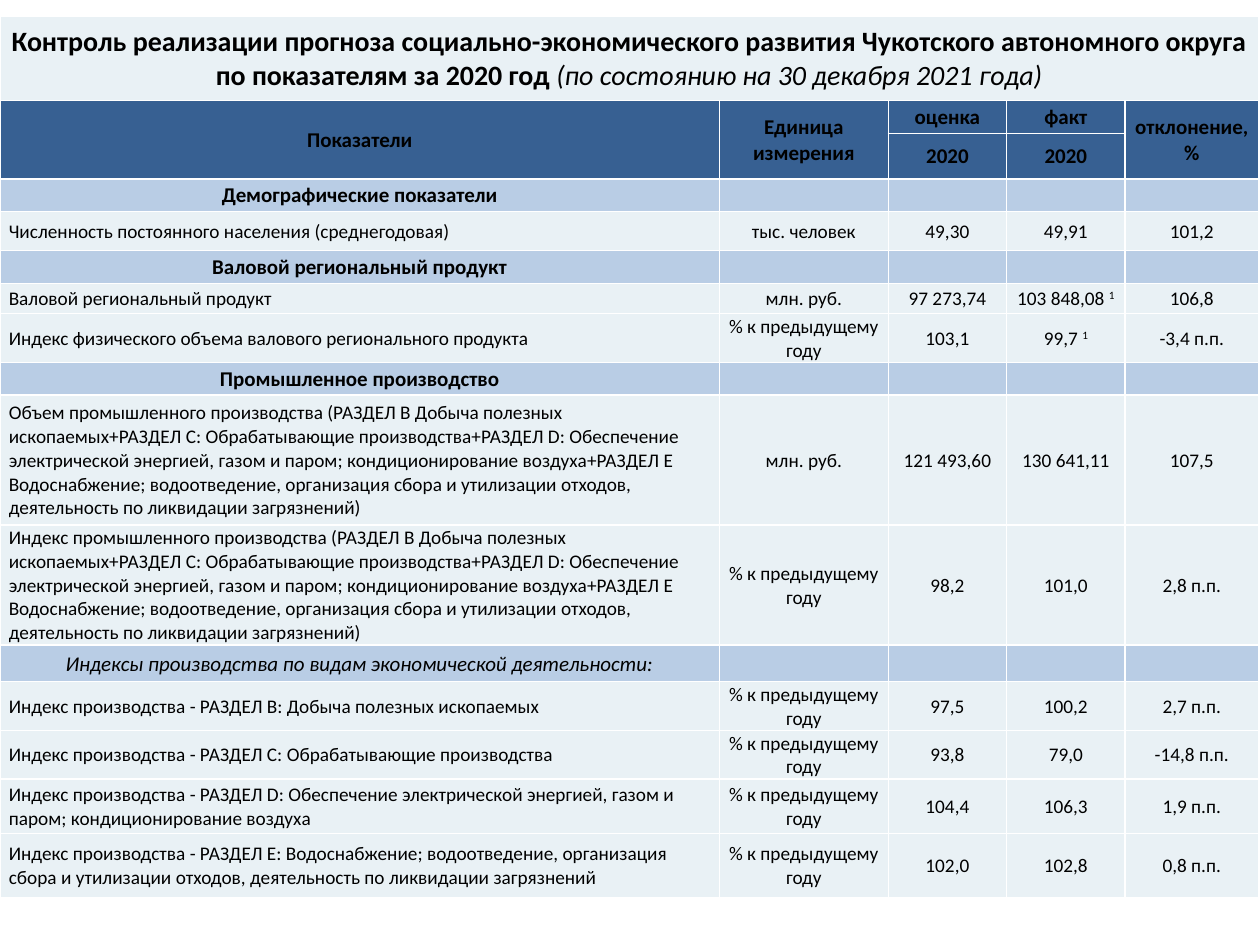
import pptx
import pptx.dml.color
import pptx.enum.text
import pptx.oxml.ns
import pptx.util
from lxml import etree

PALE, BLUE, NAVY, WHITE, BLACK = "E9F1F5", "B9CDE5", "376092", "FFFFFF", "000000"
FONT = "Calibri"
COLUMN_WIDTHS = [5.71, 1.34, 0.94, 0.94, 1.06]
TITLE_HEIGHT, HEADER_HEIGHTS = 0.67, [0.26, 0.36]
GROWTH_UNIT = "% к предыдущему году"
MONEY_UNIT = "млн. руб."
INDUSTRY = (
    "промышленного производства (РАЗДЕЛ B Добыча полезных ископаемых+РАЗДЕЛ C: "
    "Обрабатывающие производства+РАЗДЕЛ D: Обеспечение электрической энергией, газом и паром; "
    "кондиционирование воздуха+РАЗДЕЛ E Водоснабжение; водоотведение, организация сбора и "
    "утилизации отходов, деятельность по ликвидации загрязнений)"
)
HEADERS = [
    ["Показатели", "Единица измерения", "оценка", "факт", "отклонение, %"],
    ["", "", "2020", "2020", ""],
]
ACTIVITIES = "Индексы производства по видам экономической деятельности:"
BODY = [
    (0.26, "Демографические показатели"),
    (0.31, "Численность постоянного населения (среднегодовая)", "тыс. человек", "49,30", "49,91", "101,2"),
    (0.26, "Валовой региональный продукт"),
    (0.24, "Валовой региональный продукт", MONEY_UNIT, "97 273,74", "103 848,08 ^1", "106,8"),
    (0.37, "Индекс физического объема валового регионального продукта", GROWTH_UNIT,
     "103,1", "99,7 ^1", "-3,4 п.п."),
    (0.26, "Промышленное производство"),
    (1.03, "Объем " + INDUSTRY, MONEY_UNIT, "121 493,60", "130 641,11", "107,5"),
    (0.94, "Индекс " + INDUSTRY, GROWTH_UNIT, "98,2", "101,0", "2,8 п.п."),
    (0.29, ACTIVITIES),
    (0.37, "Индекс производства - РАЗДЕЛ B: Добыча полезных ископаемых", GROWTH_UNIT,
     "97,5", "100,2", "2,7 п.п."),
    (0.37, "Индекс производства - РАЗДЕЛ C: Обрабатывающие производства", GROWTH_UNIT,
     "93,8", "79,0", "-14,8 п.п."),
    (0.43, "Индекс производства - РАЗДЕЛ D: Обеспечение электрической энергией, газом и паром; "
     "кондиционирование воздуха", GROWTH_UNIT, "104,4", "106,3", "1,9 п.п."),
    (0.51, "Индекс производства - РАЗДЕЛ E: Водоснабжение; водоотведение, организация сбора и "
     "утилизации отходов, деятельность по ликвидации загрязнений", GROWTH_UNIT,
     "102,0", "102,8", "0,8 п.п."),
]


def color(hex_value):
    """Turn a hex string into a colour."""
    return pptx.dml.color.RGBColor.from_string(hex_value)


def set_borders(cell):
    """Give all four sides of a cell a thin white line."""
    properties = cell._tc.get_or_add_tcPr()
    for position, side in enumerate(("lnL", "lnR", "lnT", "lnB")):
        line = etree.Element(pptx.oxml.ns.qn("a:" + side), w=str(pptx.util.Pt(1)))
        fill = etree.SubElement(line, pptx.oxml.ns.qn("a:solidFill"))
        etree.SubElement(fill, pptx.oxml.ns.qn("a:srgbClr"), val=WHITE)
        properties.insert(position, line)


def format_cell(cell, fill, size, bold=False, italic=False, centered=True, inset=0.01):
    """Style a cell and return its paragraph."""
    cell.fill.solid()
    cell.fill.fore_color.rgb = color(fill)
    set_borders(cell)
    cell.vertical_anchor = pptx.enum.text.MSO_ANCHOR.MIDDLE
    cell.margin_left = pptx.util.Inches(inset)
    cell.margin_right = cell.margin_top = pptx.util.Inches(0.01)
    cell.margin_bottom = 0
    paragraph = cell.text_frame.paragraphs[0]
    alignment = pptx.enum.text.PP_ALIGN
    paragraph.alignment = alignment.CENTER if centered else alignment.LEFT
    font = paragraph.font
    font.name, font.size = FONT, pptx.util.Pt(size)
    font.bold, font.italic = bold, italic
    font.color.rgb = color(BLACK)
    return paragraph


def write(paragraph, text):
    """Write text, raising whatever follows a caret as a footnote mark."""
    value, _, footnote = text.partition("^")
    if value:
        paragraph.add_run().text = value
    if footnote:
        mark = paragraph.add_run()
        mark.text = footnote
        mark.font._element.set("baseline", "30000")


def fill_title(table):
    """Fill the merged title row."""
    for column in range(len(COLUMN_WIDTHS)):
        format_cell(table.cell(0, column), PALE, 16)
    table.cell(0, 0).merge(table.cell(0, len(COLUMN_WIDTHS) - 1))
    paragraph = table.cell(0, 0).text_frame.paragraphs[0]
    subject = "Контроль реализации прогноза социально-экономического развития Чукотского автономного округа"
    for text in (subject, "по показателям за 2020 год "):
        run = paragraph.add_run()
        run.text, run.font.bold = text, True
        if text == subject:
            paragraph.add_line_break()
    status_date = paragraph.add_run()
    status_date.text = "(по состоянию на 30 декабря 2021 года)"
    status_date.font.italic = True


def fill_headers(table):
    """Fill the two header rows and merge the tall headings."""
    for row, headings in enumerate(HEADERS, 1):
        for column, heading in enumerate(headings):
            write(format_cell(table.cell(row, column), NAVY, 12, bold=True), heading)
    for column in (0, 1, 4):
        table.cell(1, column).merge(table.cell(2, column))


def fill_section(table, row, heading):
    """Fill a section row, whose heading stands in the first column."""
    italic = heading == ACTIVITIES
    for column in range(len(COLUMN_WIDTHS)):
        paragraph = format_cell(table.cell(row, column), BLUE, 12, bold=not italic, italic=italic)
        write(paragraph, "" if column else heading)


def fill_indicator(table, row, values):
    """Fill a row with an indicator, its unit and its figures."""
    label_inset = 0.05 if "РАЗДЕЛ D: Обеспечение" in values[0][:40] else 0.07
    for column, value in enumerate(values):
        inset = 0.01 if column else label_inset
        paragraph = format_cell(table.cell(row, column), PALE, 11, centered=column > 0, inset=inset)
        write(paragraph, value)


def add_indicator_table(slide):
    """Add the table and set its grid."""
    heights = [TITLE_HEIGHT, *HEADER_HEIGHTS, *(entry[0] for entry in BODY)]
    table = slide.shapes.add_table(
        len(heights), len(COLUMN_WIDTHS), 0, pptx.util.Inches(0.13),
        pptx.util.Inches(sum(COLUMN_WIDTHS)), pptx.util.Inches(sum(heights)),
    ).table
    table.first_row = table.horz_banding = False
    for column, width in zip(table.columns, COLUMN_WIDTHS):
        column.width = pptx.util.Inches(width)
    for row, height in zip(table.rows, heights):
        row.height = pptx.util.Inches(height)
    return table


def main():
    """Build the slide and save it."""
    deck = pptx.Presentation()
    deck.slide_width, deck.slide_height = pptx.util.Inches(10), pptx.util.Inches(7.5)
    slide = deck.slides.add_slide(deck.slide_layouts[6])
    table = add_indicator_table(slide)
    fill_title(table)
    fill_headers(table)
    for row, (_, *values) in enumerate(BODY, 1 + len(HEADERS)):
        if len(values) == 1:
            fill_section(table, row, values[0])
        else:
            fill_indicator(table, row, values)
    deck.save("out.pptx")


if __name__ == "__main__":
    main()
